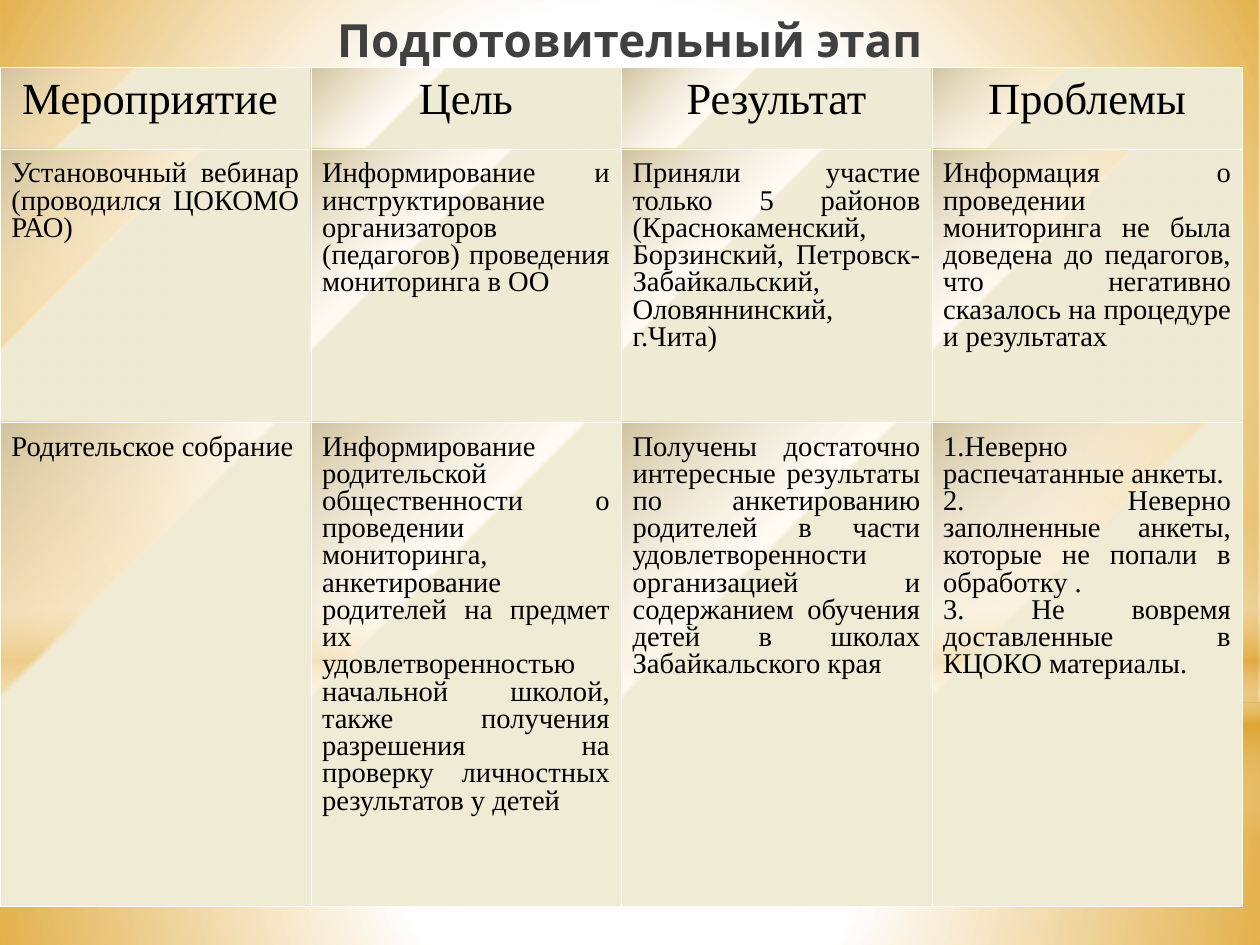
from lxml import etree
from pptx import Presentation
from pptx.dml.color import RGBColor
from pptx.enum.shapes import MSO_SHAPE
from pptx.enum.text import MSO_ANCHOR, PP_ALIGN
from pptx.oxml.ns import qn
from pptx.util import Inches, Pt

RECT, OVAL = MSO_SHAPE.RECTANGLE, MSO_SHAPE.OVAL
CENTER, JUSTIFY = PP_ALIGN.CENTER, PP_ALIGN.JUSTIFY
TOP = MSO_ANCHOR.TOP

COLORS = {
    "white": "FFFFFF", "gold": "DC9E1F", "title": "404040", "text": "000000",
    "cream": "F0EBD5", "glow": "FFF6E4", "sand": "D1C39F",
}

# Content
TITLE = "Подготовительный этап"
HEADINGS = ["Мероприятие ", "Цель", "Результат", "Проблемы"]
STAGES = [
    [
        "Установочный вебинар (проводился ЦОКОМО РАО)",
        "Информирование и инструктирование организаторов (педагогов) "
        "проведения мониторинга в ОО",
        "Приняли участие только 5 районов (Краснокаменский, Борзинский, "
        "Петровск-Забайкальский, Оловяннинский, г.Чита)",
        "Информация о проведении мониторинга не была доведена до педагогов, "
        "что негативно сказалось на процедуре и результатах",
    ],
    [
        "Родительское собрание",
        "Информирование родительской общественности о проведении мониторинга, "
        "анкетирование родителей на предмет их удовлетворенностью начальной "
        "школой, также получения разрешения на проверку личностных "
        "результатов у детей",
        "Получены достаточно интересные результаты по анкетированию родителей "
        "в части удовлетворенности организацией и содержанием обучения детей "
        "в школах Забайкальского края",
        "1.Неверно распечатанные анкеты.\n"
        "2. Неверно заполненные анкеты, которые не попали в обработку .\n"
        "3. Не вовремя доставленные в КЦОКО материалы.",
    ],
]
ROW_HEIGHTS = [0.71, 2.39, 4.24]
TABLE_TOP, TABLE_WIDTH = 0.59, 10.87
CM_PER_INCH = 2.54
SLIDE_WIDTH, SLIDE_HEIGHT = 28 / CM_PER_INCH, 21 / CM_PER_INCH  # 28 x 21 cm page

# Gradients: stops are (position %, colour, opacity %); focus is left, top, right, bottom %
MIDDLE, LOWER_RIGHT = (50, 50, 50, 50), (100, 100, 0, 0)
CELL_STOPS = [(65, "cream", 100), (66, "glow", 40), (100, "sand", 100)]
BACKDROP = [  # shape, top, height, stops, focus (None: top to bottom)
    (RECT, 6.15, 2.11, [(0, "white", 91), (37, "white", 76), (100, "gold", 79)], MIDDLE),
    (RECT, 0, 6.15, [(0, "white", 89), (48, "white", 62), (100, "gold", 79)], MIDDLE),
    (RECT, 4.54, 2.76, [(0, "white", 0), (29, "white", 30), (45, "gold", 40),
                        (55, "white", 26), (65, "gold", 60), (100, "white", 0)], None),
    (OVAL, 1.93, 6.15, [(0, "white", 100), (56, "white", 0)], MIDDLE),
]


def add_node(parent, tag, **attributes):
    return etree.SubElement(parent, qn(tag), {k: str(v) for k, v in attributes.items()})


def add_color(parent, name, opacity=100):
    color = add_node(parent, "a:srgbClr", val=COLORS[name])
    if opacity < 100:
        add_node(color, "a:alpha", val=opacity * 1000)


def add_gradient(parent, stops, focus):
    gradient = add_node(parent, "a:gradFill", rotWithShape=1)
    stop_list = add_node(gradient, "a:gsLst")
    for position, name, opacity in stops:
        add_color(add_node(stop_list, "a:gs", pos=position * 1000), name, opacity)
    if focus:
        sides = {side: value * 1000 for side, value in zip("ltrb", focus)}
        add_node(add_node(gradient, "a:path", path="circle"), "a:fillToRect", **sides)
    else:
        add_node(gradient, "a:lin", ang=5400000, scaled=0)
    return gradient


def style(paragraph, font_name, size, color, align):
    paragraph.alignment = align
    font = paragraph.font
    font.name, font.size = font_name, Pt(size)
    font.color.rgb = RGBColor.from_string(COLORS[color])


def fill_cell(cell, text, is_heading):
    cell.margin_left = cell.margin_right = Inches(0.1)
    cell.margin_top = Inches(0.12 if is_heading else 0.11)
    cell.margin_bottom = Inches(0.05)
    cell.vertical_anchor = TOP
    cell.text_frame.text = text
    for paragraph in cell.text_frame.paragraphs:
        paragraph.line_spacing = 0.86
        style(paragraph, "Times New Roman", 28 if is_heading else 18, "text",
              CENTER if is_heading else JUSTIFY)
    properties = cell._tc.get_or_add_tcPr()
    for side in ("a:lnL", "a:lnR", "a:lnT", "a:lnB"):
        border = add_node(properties, side, w=Pt(0.06))
        add_color(add_node(border, "a:solidFill"), "white")
    add_gradient(properties, CELL_STOPS, LOWER_RIGHT)


prs = Presentation()
prs.slide_width, prs.slide_height = Inches(SLIDE_WIDTH), Inches(SLIDE_HEIGHT)
slide = prs.slides.add_slide(prs.slide_layouts[6])
shapes = slide.shapes

# Golden backdrop
for preset, top, height, stops, focus in BACKDROP:
    layer = shapes.add_shape(preset, 0, Inches(top), Inches(SLIDE_WIDTH), Inches(height))
    layer.shadow.inherit = False
    layer.line.fill.background()
    gradient = add_gradient(layer._element.spPr, stops, focus)
    layer._element.spPr.find(qn("a:prstGeom")).addnext(gradient)

# Title
title = shapes.add_textbox(Inches(0.55), Inches(0.04), Inches(9.92), Inches(0.5)).text_frame
title.word_wrap = True
title.vertical_anchor = TOP
title.margin_left = title.margin_right = Inches(0.11)
title.margin_top = title.margin_bottom = Inches(0.06)
title.text = TITLE
style(title.paragraphs[0], "Karla", 28.8, "title", CENTER)
title.paragraphs[0].font.bold = True

# Table of stages
rows = [HEADINGS] + STAGES
table = shapes.add_table(len(rows), len(HEADINGS), 0, Inches(TABLE_TOP),
                         Inches(TABLE_WIDTH), Inches(sum(ROW_HEIGHTS))).table
table.first_row = table.horz_banding = False
for row_index, (texts, height) in enumerate(zip(rows, ROW_HEIGHTS)):
    table.rows[row_index].height = Inches(height)
    for column_index, text in enumerate(texts):
        fill_cell(table.cell(row_index, column_index), text, row_index == 0)

prs.save("out.pptx")
